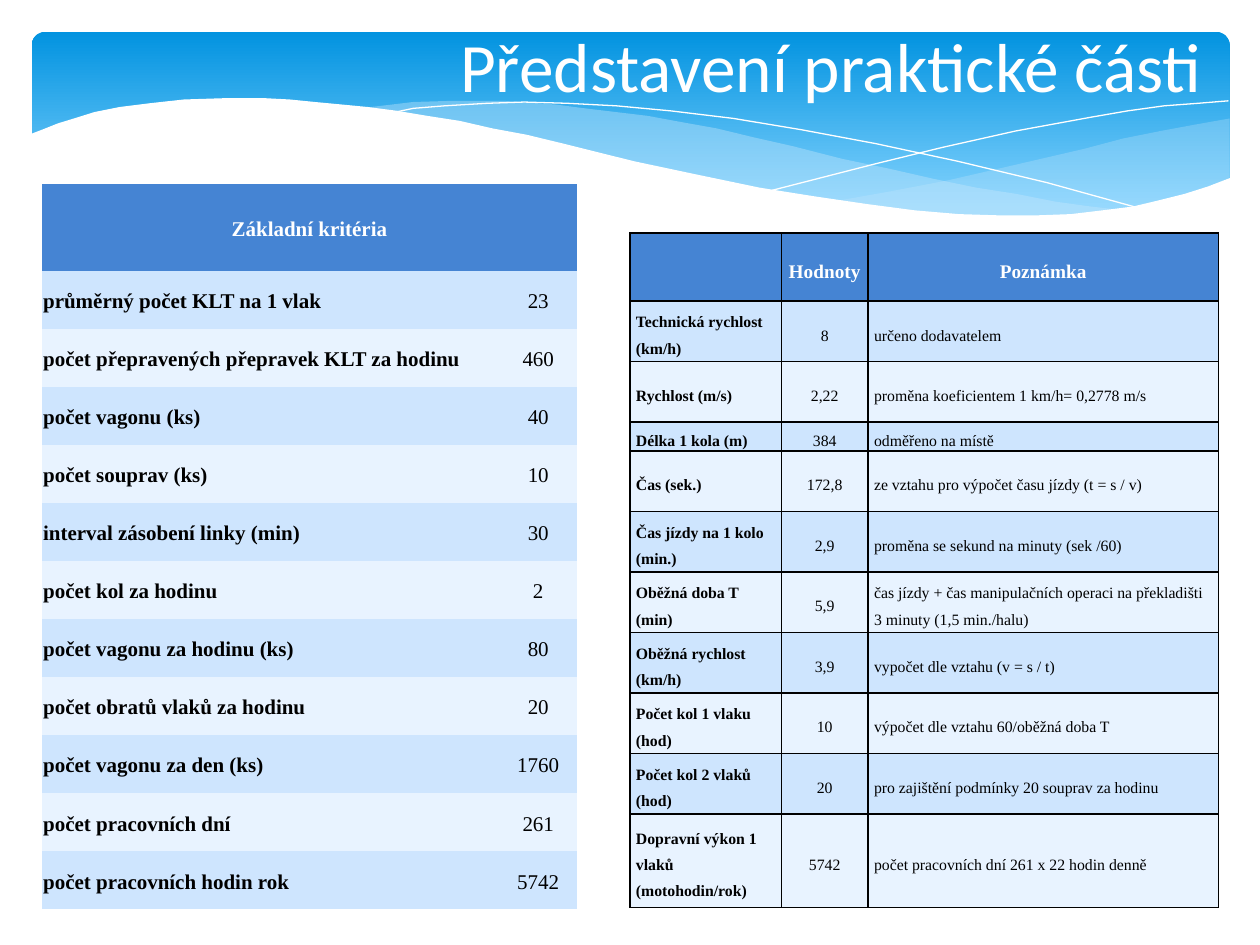
from dataclasses import dataclass

from lxml.etree import SubElement
from pptx import Presentation
from pptx.dml.color import RGBColor
from pptx.enum.shapes import MSO_SHAPE
from pptx.enum.text import MSO_ANCHOR, PP_ALIGN
from pptx.oxml.ns import qn
from pptx.util import Cm, Pt


@dataclass(frozen=True)
class Theme:
    white: str = "FFFFFF"
    black: str = "000000"
    sky_top: str = "0293E0"
    sky_bottom: str = "83D3FE"
    mist: str = "C6E7FC"
    header: str = "4584D3"
    bands: tuple = ("CEE5FE", "E8F3FF")
    title_font: str = "Calibri"
    table_font: str = "Times New Roman"
    title_size: float = 39.6
    criteria_size: float = 12
    header_size: float = 11
    values_size: float = 9


THEME = Theme()
NO_GRID_STYLE = "{2D5ABB26-0587-4C30-8999-92F81FD0307C}"
WAVE_UNIT = Cm(0.0254)  # wave points are hundredths of an inch

RIGHT_MIST = [
    (976, 94), (948, 99), (921, 104), (891, 110), (861, 118), (805, 131), (753, 143),
    (706, 152), (661, 160), (691, 164), (732, 168), (769, 171), (803, 172), (835, 172),
    (863, 170), (889, 166), (913, 162), (935, 156), (963, 147), (976, 141)]
CENTRE_MIST = [
    (893, 167), (866, 164), (837, 160), (807, 154), (775, 149), (741, 142), (706, 134),
    (668, 126), (629, 116), (598, 109), (569, 102), (541, 97), (514, 92), (489, 89),
    (464, 86), (441, 83), (399, 80), (361, 80), (328, 81), (286, 86), (323, 90),
    (362, 97), (404, 106), (449, 116), (530, 135), (584, 146), (634, 156), (680, 163),
    (722, 168), (761, 171), (796, 173), (828, 173), (857, 171)]
FALLING_LINE = [
    (309, 90), (328, 86), (353, 84), (387, 82), (416, 81), (450, 82), (489, 84),
    (532, 88), (582, 94), (636, 103), (695, 114), (760, 128), (831, 145), (907, 166)]
RISING_LINE = [
    (613, 151), (652, 141), (695, 130), (748, 117), (806, 104), (866, 93),
    (895, 88), (924, 84), (951, 82), (975, 80)]
WHITE_WAVE = [
    (977, 141), (959, 148), (940, 154), (920, 159), (899, 164), (875, 167), (850, 170),
    (823, 171), (793, 171), (761, 170), (726, 167), (688, 162), (647, 156), (603, 149),
    (555, 139), (503, 128), (447, 114), (418, 107), (391, 102), (365, 96), (339, 92),
    (315, 88), (292, 85), (271, 83), (250, 81), (230, 79), (211, 78), (177, 78),
    (146, 79), (119, 82), (95, 85), (75, 89), (59, 94), (46, 98), (36, 102),
    (23, 107), (23, 224), (977, 224)]

CRITERIA = [
    ("Základní kritéria", ""),
    ("průměrný počet KLT na 1 vlak", "23"),
    ("počet přepravených přepravek KLT za hodinu", "460"),
    ("počet vagonu (ks)", "40"),
    ("počet souprav (ks)", "10"),
    ("interval zásobení linky (min)", "30"),
    ("počet kol za hodinu", "2"),
    ("počet vagonu za hodinu (ks)", "80"),
    ("počet obratů vlaků za hodinu", "20"),
    ("počet vagonu za den (ks)", "1760"),
    ("počet pracovních dní", "261"),
    ("počet pracovních hodin rok", "5742"),
]
VALUES = [
    ("", "Hodnoty", "Poznámka"),
    ("Technická rychlost (km/h)", "8", "určeno dodavatelem"),
    ("Rychlost (m/s)", "2,22", "proměna koeficientem 1 km/h= 0,2778 m/s"),
    ("Délka 1 kola (m)", "384", "odměřeno na místě"),
    ("Čas (sek.)", "172,8", "ze vztahu pro výpočet času jízdy (t = s / v)"),
    ("Čas jízdy na 1 kolo (min.)", "2,9", "proměna se sekund na minuty (sek /60)"),
    ("Oběžná doba T (min)", "5,9",
     "čas jízdy + čas manipulačních operaci na překladišti 3 minuty (1,5 min./halu)"),
    ("Oběžná rychlost (km/h)", "3,9", "vypočet dle vztahu (v = s / t)"),
    ("Počet kol 1 vlaku (hod)", "10", "výpočet dle vztahu 60/oběžná doba T"),
    ("Počet kol 2 vlaků (hod)", "20", "pro zajištění podmínky 20 souprav za hodinu"),
    ("Dopravní výkon 1 vlaků (motohodin/rok)", "5742",
     "počet pracovních dní 261 x 22 hodin denně"),
]


def rgb(color):
    return RGBColor.from_string(color)


def write_text(frame, text, *, font, size, color, bold=False, align=PP_ALIGN.LEFT, spacing=1.0):
    para = frame.paragraphs[0]
    para.alignment = align
    para.line_spacing = spacing
    para.font.size = Pt(size)
    if text:
        span = para.add_run()
        span.text = text
        span.font.name = font
        span.font.size = Pt(size)
        span.font.bold = bold
        span.font.color.rgb = rgb(color)


def add_banner(page):
    banner = page.shapes.add_shape(
        MSO_SHAPE.ROUNDED_RECTANGLE, Cm(0.64), Cm(0.64), Cm(24.15), Cm(3.96))
    banner.adjustments[0] = 0.07
    banner.shadow.inherit = False
    banner.line.fill.background()
    banner.fill.gradient()
    banner.fill.gradient_angle = 270
    stops = banner.fill.gradient_stops
    for stop, color, position in zip(stops, (THEME.sky_top, THEME.sky_bottom), (0, 0.9)):
        stop.color.rgb = rgb(color)
        stop.position = position


def add_wave(group, points, *, fill=None, opacity=100, line=None):
    builder = group.shapes.build_freeform(*points[0], scale=WAVE_UNIT)
    builder.add_line_segments(points[1:], close=fill is not None)
    wave = builder.convert_to_shape()
    wave.shadow.inherit = False
    if fill:
        wave.fill.solid()
        wave.fill.fore_color.rgb = rgb(fill)
        if opacity < 100:
            color = next(wave.element.iter(qn("a:srgbClr")))
            SubElement(color, qn("a:alpha"), val=str(opacity * 1000))
    else:
        wave.fill.background()
    if line:
        wave.line.color.rgb = rgb(line)
        wave.line.width = Pt(0)
    else:
        wave.line.fill.background()


def add_title(page, text):
    box = page.shapes.add_textbox(Cm(8.1), Cm(0.71), Cm(17.3), Cm(1.2))
    box.text_frame.word_wrap = True
    box.text_frame.vertical_anchor = MSO_ANCHOR.MIDDLE
    write_text(box.text_frame, text, font=THEME.title_font, size=THEME.title_size,
               color=THEME.white, align=PP_ALIGN.CENTER)


def add_borders(cell):
    properties = cell._tc.get_or_add_tcPr()
    for index, side in enumerate(("a:lnL", "a:lnR", "a:lnT", "a:lnB")):
        border = SubElement(properties, qn(side), w=str(Pt(1)))
        properties.insert(index, border)
        SubElement(SubElement(border, qn("a:solidFill")), qn("a:srgbClr"), val=THEME.black)


def add_data_table(page, rows, *, left, top, widths, heights, size, header_size,
                   spacing, margin, bordered=False):
    frame = page.shapes.add_table(len(rows), len(widths), left, top, sum(widths), sum(heights))
    next(frame.element.iter(qn("a:tableStyleId"))).text = NO_GRID_STYLE
    table = frame.table
    for column, width in zip(table.columns, widths):
        column.width = width
    for row, height in zip(table.rows, heights):
        row.height = height
    for r, texts in enumerate(rows):
        is_header = r == 0
        for c, text in enumerate(texts):
            cell = table.cell(r, c)
            cell.margin_left = cell.margin_right = margin
            cell.margin_top = cell.margin_bottom = 0
            cell.vertical_anchor = MSO_ANCHOR.MIDDLE
            cell.fill.solid()
            cell.fill.fore_color.rgb = rgb(THEME.header if is_header else THEME.bands[(r - 1) % 2])
            write_text(cell.text_frame, text, font=THEME.table_font,
                       size=header_size if is_header else size,
                       color=THEME.white if is_header else THEME.black,
                       bold=is_header or c == 0, spacing=spacing,
                       align=PP_ALIGN.CENTER if is_header or c == 1 else PP_ALIGN.LEFT)
            if bordered:
                add_borders(cell)
    return table


def main():
    deck = Presentation()
    deck.slide_width, deck.slide_height = Cm(25.4), Cm(19.05)
    page = deck.slides.add_slide(deck.slide_layouts[6])

    # Banner with waves
    add_banner(page)
    waves = page.shapes.add_group_shape()
    add_wave(waves, RIGHT_MIST, fill=THEME.mist, opacity=29)
    add_wave(waves, CENTRE_MIST, fill=THEME.mist, opacity=40)
    add_wave(waves, FALLING_LINE, line=THEME.white)
    add_wave(waves, RISING_LINE, line=THEME.white)
    add_wave(waves, WHITE_WAVE, fill=THEME.white)
    add_title(page, "Představení praktické části")

    # Basic criteria
    criteria = add_data_table(
        page, CRITERIA, left=Cm(0.84), top=Cm(3.71), widths=[Cm(9.22), Cm(1.58)],
        heights=[Cm(1.75)] + [Cm(1.17)] * 11, size=THEME.criteria_size,
        header_size=THEME.criteria_size, spacing=1.15, margin=Cm(0.03))
    criteria.cell(0, 0).merge(criteria.cell(0, 1))

    # Values with notes
    add_data_table(
        page, VALUES, left=Cm(12.7), top=Cm(4.7), widths=[Cm(3.05), Cm(1.75), Cm(7.06)],
        heights=[Cm(1.37)] + [Cm(1.22)] * 2 + [Cm(0.58)] + [Cm(1.22)] * 6 + [Cm(1.88)],
        size=THEME.values_size, header_size=THEME.header_size, spacing=1.5,
        margin=Cm(0.12), bordered=True)

    deck.save("out.pptx")


if __name__ == "__main__":
    main()
